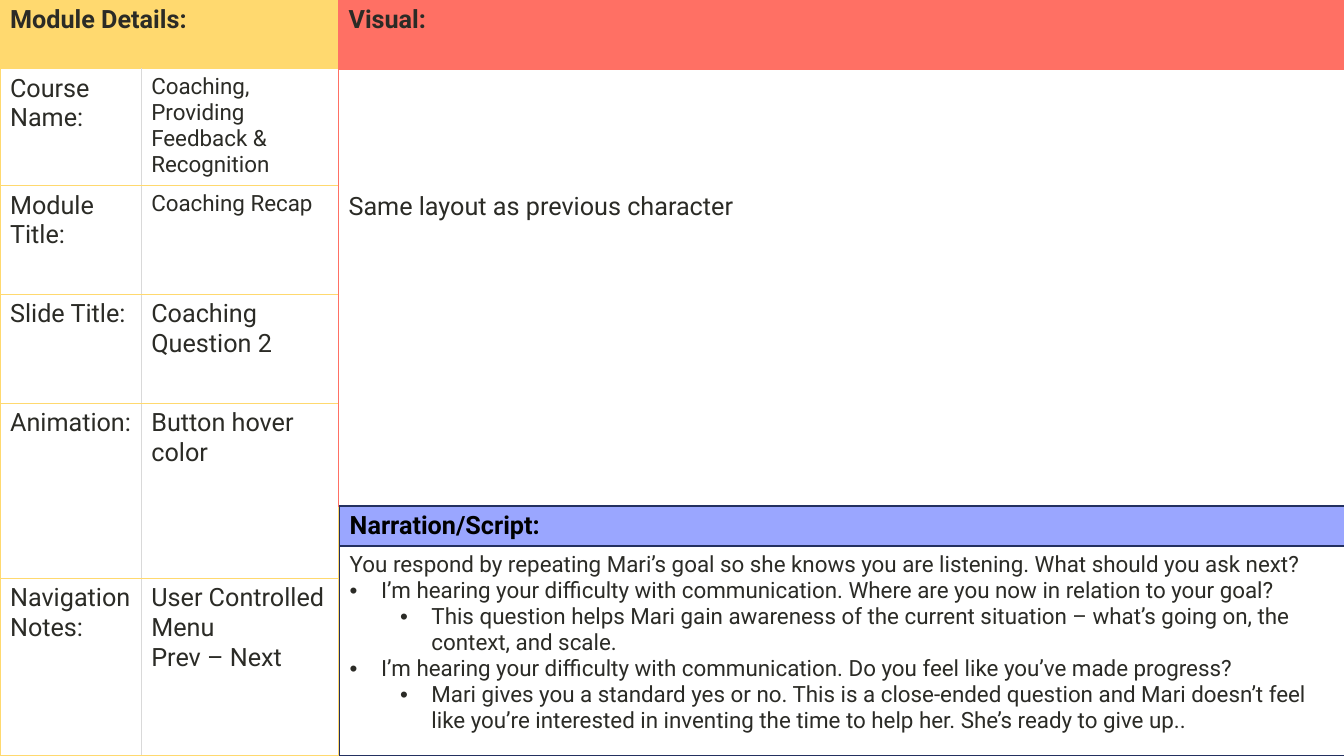
from lxml import etree
from pptx import Presentation
from pptx.dml.color import RGBColor
from pptx.oxml.ns import qn
from pptx.util import Cm, Pt

BACKGROUND = RGBColor(0xF9, 0xF9, 0xF9)
WHITE = RGBColor(0xFF, 0xFF, 0xFF)
BLACK = RGBColor(0x00, 0x00, 0x00)
INK = RGBColor(0x2B, 0x2B, 0x26)
GREY = RGBColor(0xD9, 0xD9, 0xD9)
YELLOW = RGBColor(0xFF, 0xD9, 0x6F)
CORAL = RGBColor(0xFF, 0x70, 0x64)
LAVENDER = RGBColor(0x9A, 0xA6, 0xFF)
NAVY = RGBColor(0x23, 0x30, 0x60)


class Storyboard:
    """Holds the text style and the current slide."""

    font = "Roboto"

    def __init__(self, slide):
        self.slide = slide

    def table(self, left, top, cols, rows, border, divider=None):
        frame = self.slide.shapes.add_table(
            len(rows), len(cols), Cm(left), Cm(top), Cm(sum(cols)), Cm(sum(rows)))
        table = frame.table
        table.first_row = table.horz_banding = False
        for column, width in zip(table.columns, cols):
            column.width = Cm(width)
        for row, height in zip(table.rows, rows):
            row.height = Cm(height)
        last = len(cols) - 1
        for r in range(len(rows)):
            for c in range(len(cols)):
                inner = divider or border
                self.borders(table.cell(r, c), {
                    "a:lnL": inner if c > 0 else border,
                    "a:lnR": inner if c < last else border,
                    "a:lnT": border, "a:lnB": border})
        return table

    def borders(self, cell, colors):
        tc_pr = cell._tc.get_or_add_tcPr()
        for tag, color in colors.items():
            line = etree.SubElement(tc_pr, qn(tag), w=str(Pt(1)))
            fill = etree.SubElement(line, qn("a:solidFill"))
            etree.SubElement(fill, qn("a:srgbClr"), val=str(color))

    def cell(self, cell, text, fill=WHITE, size=18, color=INK, bold=False):
        cell.fill.solid()
        cell.fill.fore_color.rgb = fill
        tf = cell.text_frame
        tf.text = text
        for p in tf.paragraphs:
            for r in p.runs:
                r.font.name = self.font
                r.font.size = Pt(size)
                r.font.bold = bold
                r.font.color.rgb = color
        return tf

    def bullet(self, p, level):
        p.level = level
        p_pr = p._p.get_or_add_pPr()
        p_pr.set("marL", str(Cm(0.79 + 1.27 * level)))
        p_pr.set("indent", str(Cm(-0.79)))
        etree.SubElement(p_pr, qn("a:buFont"), typeface="Arial")
        etree.SubElement(p_pr, qn("a:buChar"), char="•")


DETAILS = [
    ("Course Name:", "Coaching, Providing Feedback & Recognition", 16),
    ("Module Title:", "Coaching Recap", 16),
    ("Slide Title:", "Coaching Question 2", 18),
    ("Animation:", "Button hover color", 18),
    ("Navigation Notes:", "User Controlled\nMenu\nPrev – Next", 18),
]

# Text and bullet level (None for plain text)
SCRIPT = [
    ("You respond by repeating Mari’s goal so she knows you are listening. "
     "What should you ask next?", None),
    ("I’m hearing your difficulty with communication. "
     "Where are you now in relation to your goal?", 0),
    ("This question helps Mari gain awareness of the current situation – "
     "what’s going on, the context, and scale.", 1),
    ("I’m hearing your difficulty with communication. "
     "Do you feel like you’ve made progress?", 0),
    ("Mari gives you a standard yes or no. This is a close-ended question and "
     "Mari doesn’t feel like you’re interested in inventing the time to help her. "
     "She’s ready to give up..", 1),
]


def main():
    prs = Presentation()
    prs.slide_width, prs.slide_height = Cm(33.87), Cm(19.05)
    s = prs.slides.add_slide(prs.slide_layouts[6])
    s.background.fill.solid()
    s.background.fill.fore_color.rgb = BACKGROUND
    board = Storyboard(s)

    # Module details
    details = board.table(0, 0, [3.56, 4.98],
                          [1.73, 2.95, 2.74, 2.74, 4.42, 4.47], YELLOW, GREY)
    details.cell(0, 0).merge(details.cell(0, 1))
    board.cell(details.cell(0, 0), "Module Details:", YELLOW, bold=True)
    for row, (label, value, size) in enumerate(DETAILS, start=1):
        board.cell(details.cell(row, 0), label)
        board.cell(details.cell(row, 1), value, size=size)

    # Visual
    visual = board.table(8.53, 0, [25.35], [1.75, 11], CORAL)
    board.cell(visual.cell(0, 0), "Visual:", CORAL, bold=True)
    board.cell(visual.cell(1, 0), "Same layout as previous character")
    visual.cell(1, 0).margin_top = Cm(3.1)

    # Narration heading and script
    heading = board.table(8.56, 12.75, [25.35], [1], NAVY)
    board.cell(heading.cell(0, 0), "Narration/Script:", LAVENDER, color=BLACK, bold=True)
    script = board.table(8.56, 13.77, [25.35], [5.28], NAVY)
    tf = board.cell(script.cell(0, 0), "\n".join(text for text, _ in SCRIPT), size=16)
    for p, (_, level) in zip(tf.paragraphs, SCRIPT):
        if level is not None:
            board.bullet(p, level)

    prs.save("out.pptx")


if __name__ == "__main__":
    main()
